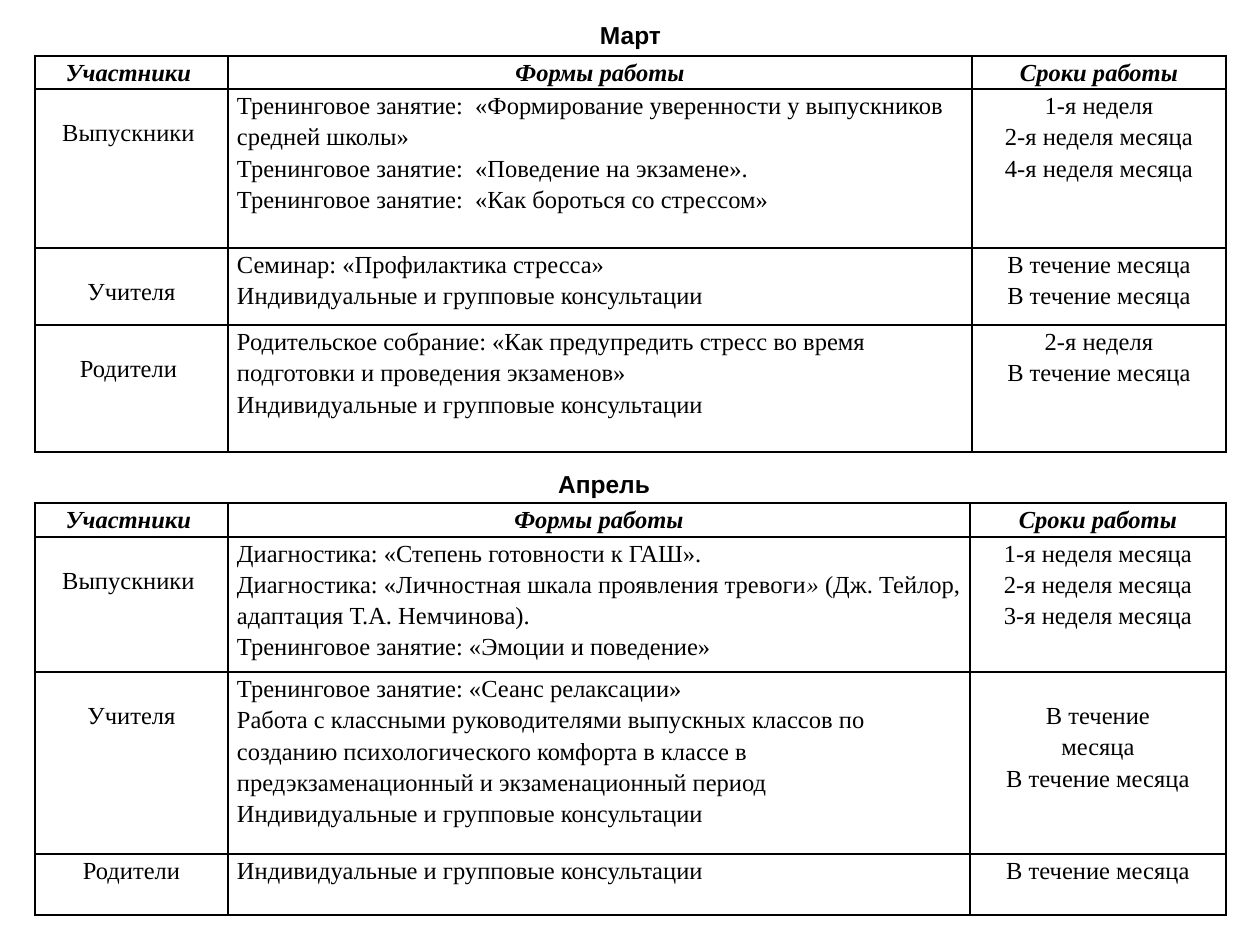
from pptx import Presentation
from pptx.dml.color import RGBColor
from pptx.enum.text import MSO_ANCHOR as Anchor, PP_ALIGN as Align
from pptx.oxml import parse_xml
from pptx.oxml.ns import nsdecls
from pptx.util import Emu, Pt

# Content: a line is a string, or a tuple of (text, italic) parts
HEADER = ["Участники ", "Формы работы", "Сроки работы"]
CONSULTING = "Индивидуальные и групповые консультации"
ALL_MONTH = "В течение месяца"

# Each row: height, participants, forms of work, dates, and the columns that start one line lower
MONTHS = [
    {
        "name": "Март", "label": (587, 14, 87, 36),
        "top": 56, "columns": [193, 744, 254], "header_height": 33,
        "rows": [
            (159, ["Выпускники "],
             ["Тренинговое занятие:  «Формирование уверенности у выпускников средней школы»",
              "Тренинговое занятие:  «Поведение на экзамене».",
              "Тренинговое занятие:  «Как бороться со стрессом»"],
             ["1-я неделя", "2-я неделя месяца", "4-я неделя месяца"], {0}),
            (77, ["Учителя"],
             ["Семинар: «Профилактика стресса»", CONSULTING],
             [ALL_MONTH, ALL_MONTH], {0}),
            (127, ["Родители "],
             ["Родительское собрание: «Как предупредить стресс во время "
              "подготовки и проведения экзаменов»", CONSULTING],
             ["2-я неделя", ALL_MONTH], {0}),
        ],
    },
    {
        "name": "Апрель", "label": (545, 463, 118, 36),
        "top": 503, "columns": [193, 742, 256], "header_height": 30,
        "rows": [
            (125, ["Выпускники "],
             ["Диагностика: «Степень готовности к ГАШ».",
              (("Диагностика: «Личностная шкала проявления тревоги", False), ("» ", True),
               ("(Дж. Тейлор, адаптация Т.А. Немчинова).", False)),
              "Тренинговое занятие: «Эмоции и поведение»"],
             ["1-я неделя месяца", "2-я неделя месяца", "3-я неделя месяца"], {0}),
            (182, ["Учителя"],
             ["Тренинговое занятие: «Сеанс релаксации»",
              "Работа с классными руководителями выпускных классов по созданию "
              "психологического комфорта в классе в предэкзаменационный и "
              "экзаменационный период", CONSULTING],
             ["В течение", "месяца", ALL_MONTH], {0, 2}),
            (61, ["Родители"], [CONSULTING], [ALL_MONTH], set()),
        ],
    },
]

THEME = {
    "ink": RGBColor(0, 0, 0), "size": Pt(14),
    "label_font": "Arial", "table_font": "Times New Roman",
    "border": Pt(1), "spacing": 1.15,
}
TABLE_LEFT = 35
CELL_INSET = 9
LOWERED = 27


def px(length):
    return Emu(length * 914400 // 126)


def write(frame, lines, font, align=Align.CENTER, bold=False, italic=False, spacing=None):
    for index, line in enumerate(lines):
        para = frame.paragraphs[0] if index == 0 else frame.add_paragraph()
        para.alignment = align
        if spacing:
            para.line_spacing = spacing
        parts = [(line, italic)] if isinstance(line, str) else line
        for text, slanted in parts:
            span = para.add_run()
            span.text = text
            span.font.name = font
            span.font.size = THEME["size"]
            span.font.bold = bold
            span.font.italic = slanted
            span.font.color.rgb = THEME["ink"]


def add_borders(cell):
    properties = cell._tc.get_or_add_tcPr()
    for side in ("lnL", "lnR", "lnT", "lnB"):
        properties.append(parse_xml(
            f'<a:{side} {nsdecls("a")} w="{THEME["border"]}"><a:solidFill>'
            f'<a:srgbClr val="{THEME["ink"]}"/></a:solidFill></a:{side}>'))


def fill_cell(cell, lines, lowered=False, **style):
    cell.margin_left = cell.margin_right = px(CELL_INSET)
    cell.margin_top = px(LOWERED if lowered else 0)
    cell.margin_bottom = 0
    add_borders(cell)
    cell.fill.background()
    write(cell.text_frame, lines, THEME["table_font"], spacing=THEME["spacing"], **style)


def add_label(page, month):
    box = page.shapes.add_textbox(*map(px, month["label"]))
    frame = box.text_frame
    frame.word_wrap = False
    frame.vertical_anchor = Anchor.MIDDLE
    frame.margin_bottom = 0
    write(frame, [month["name"]], THEME["label_font"], bold=True)


def add_plan(page, month):
    columns, rows = month["columns"], month["rows"]
    heights = [month["header_height"]] + [row[0] for row in rows]
    table = page.shapes.add_table(
        len(heights), len(columns), px(TABLE_LEFT), px(month["top"]),
        px(sum(columns)), px(sum(heights))).table
    table.first_row = table.horz_banding = False
    for column, width in zip(table.columns, columns):
        column.width = px(width)
    for row, height in zip(table.rows, heights):
        row.height = px(height)

    # Header row, then one row for each group of participants
    for index, title in enumerate(HEADER):
        fill_cell(table.cell(0, index), [title], bold=True, italic=True)
    for number, (_, *cells, lowered) in enumerate(rows, start=1):
        for index, lines in enumerate(cells):
            fill_cell(table.cell(number, index), lines, lowered=index in lowered,
                      align=Align.LEFT if index == 1 else Align.CENTER)


def main():
    deck = Presentation()
    deck.slide_width, deck.slide_height = px(1260), px(945)
    page = deck.slides.add_slide(deck.slide_layouts[6])
    for month in MONTHS:
        add_plan(page, month)
        add_label(page, month)
    deck.save("out.pptx")


if __name__ == "__main__":
    main()
